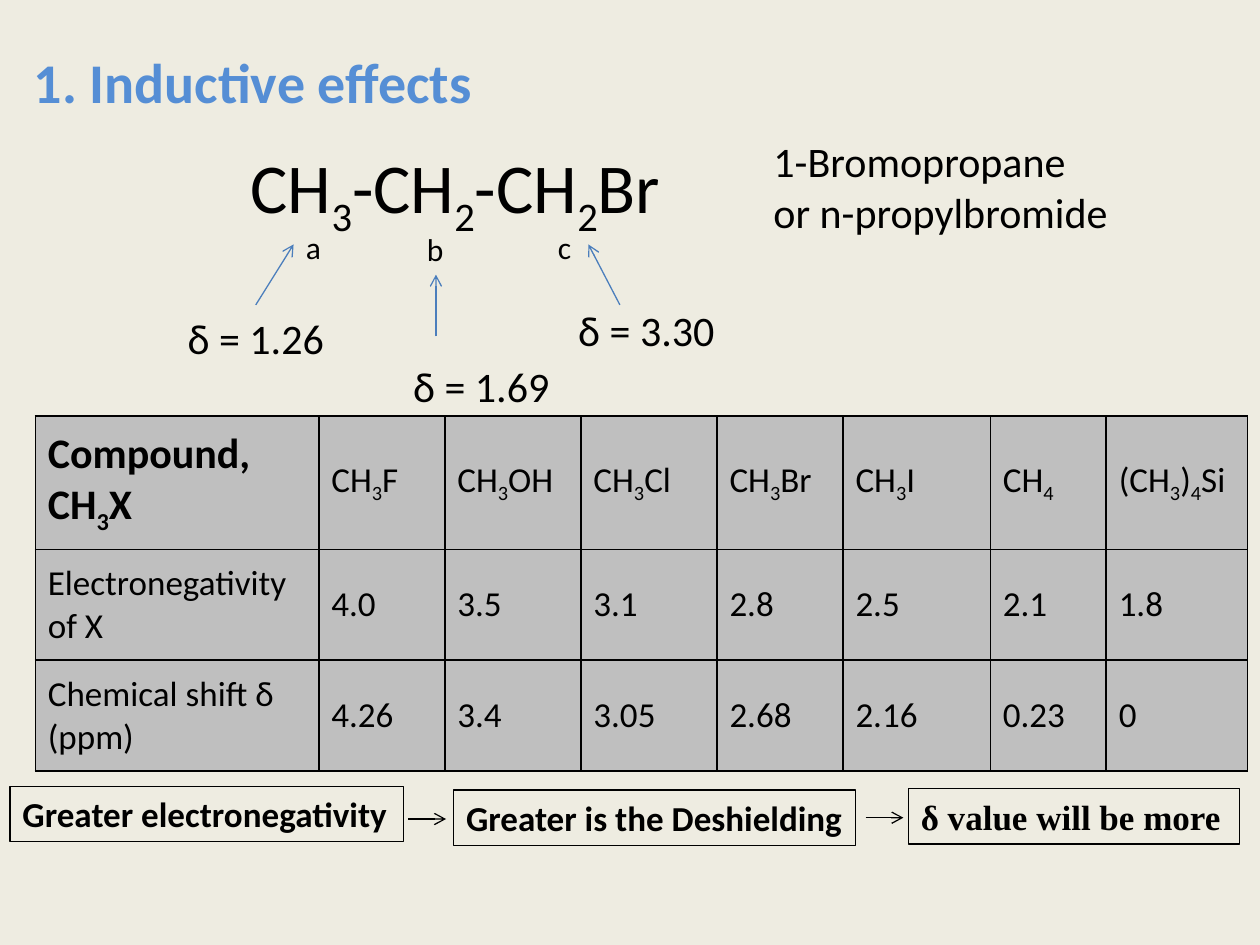
from itertools import groupby
from lxml import etree
from pptx import Presentation
from pptx.dml.color import RGBColor
from pptx.enum import shapes, text
from pptx.oxml import ns
from pptx.util import Inches, Pt

# Content
COLORS = {"back": "EEECE1", "title": "558ED5", "ink": "000000",
          "cell": "BFBFBF", "arrow": "4B7EBC"}
FONT, SERIF = "Calibri", "Times New Roman"

TITLE = ("1. Inductive effects", (0.17, 0.33, 3.73, 0.64))
FORMULA = ("CH3-CH2-CH2Br", (1.64, 1.09, 4.85, 0.77))
# text, box, size
LABELS = [
    ("a", (2.33, 1.76, 0.32, 0.4), 18),
    ("b", (3.29, 1.78, 0.34, 0.4), 18),
    ("c", (4.33, 1.76, 0.31, 0.4), 18),
    ("δ = 1.26", (1.39, 2.43, 1.29, 0.5), 24),
    ("δ = 3.30", (4.49, 2.37, 1.29, 0.5), 24),
    ("δ = 1.69", (3.18, 2.81, 1.29, 0.5), 24),
    ("1-Bromopropane\nor n-propylbromide", (6.04, 1.03, 2.88, 0.91), 24),
]
# start, end, color
ARROWS = [
    ((2.03, 2.42), (2.33, 1.94), "arrow"),
    ((3.46, 2.67), (3.46, 2.18), "arrow"),
    ((4.92, 2.42), (4.67, 1.94), "arrow"),
    ((3.24, 6.5), (3.54, 6.5), "ink"),
    ((6.87, 6.49), (7.17, 6.49), "ink"),
]
ROWS = [
    ["Compound, CH3X", "CH3F", "CH3OH", "CH3Cl", "CH3Br", "CH3I", "CH4", "(CH3)4Si"],
    ["Electronegativity of X", "4.0", "3.5", "3.1", "2.8", "2.5", "2.1", "1.8"],
    ["Chemical shift δ (ppm)", "4.26", "3.4", "3.05", "2.68", "2.16", "0.23", "0"],
]
WIDTHS = [2.25, 1, 1.08, 1.08, 1, 1.17, 0.92, 1.12]
HEIGHTS = [1.06, 0.88, 0.88]
STEPS = [
    ("Greater electronegativity", (0.08, 6.24, 3.12, 0.44), FONT),
    ("Greater is the Deshielding", (3.6, 6.27, 3.19, 0.44), FONT),
    ("δ value will be more", (7.21, 6.26, 2.63, 0.44), SERIF),
]


def rgb(name):
    return RGBColor.from_string(COLORS[name])


def style(par, size, bold=False, color="ink", face=FONT):
    font = par.font
    font.size, font.bold, font.name = Pt(size), bold, face
    font.color.rgb = rgb(color)


def write(frame, words, size, **look):
    frame.text = words
    for par in frame.paragraphs:
        style(par, size, **look)


def write_formula(frame, words, size, **look):
    """Lower every digit of a chemical formula."""
    par = frame.paragraphs[0]
    for low, part in groupby(words, str.isdigit):
        run = par.add_run()
        run.text = "".join(part)
        if low:
            run._r.get_or_add_rPr().set("baseline", "-25000")
    style(par, size, **look)


def add_box(slide, box):
    return slide.shapes.add_textbox(*map(Inches, box)).text_frame


def add_arrow(slide, start, end, color):
    line = slide.shapes.add_connector(
        shapes.MSO_CONNECTOR.STRAIGHT, *map(Inches, start + end))
    line.line.color.rgb = rgb(color)
    line.line.width = Pt(0.75)
    etree.SubElement(line.line._get_or_add_ln(), ns.qn("a:tailEnd"), type="arrow")
    etree.SubElement(line._element.spPr, ns.qn("a:effectLst"))


def add_borders(cell):
    props = cell._tc.get_or_add_tcPr()
    for spot, side in enumerate(("lnL", "lnR", "lnT", "lnB")):
        edge = etree.Element(ns.qn("a:" + side), w=str(Pt(1)))
        fill = etree.SubElement(edge, ns.qn("a:solidFill"))
        etree.SubElement(fill, ns.qn("a:srgbClr"), val=COLORS["ink"])
        props.insert(spot, edge)


def add_grid(slide):
    grid = slide.shapes.add_table(
        len(ROWS), len(WIDTHS), Inches(0.28), Inches(3.3),
        Inches(sum(WIDTHS)), Inches(sum(HEIGHTS))).table
    for col, width in zip(grid.columns, WIDTHS):
        col.width = Inches(width)
    for r, row in enumerate(ROWS):
        grid.rows[r].height = Inches(HEIGHTS[r])
        for c, words in enumerate(row):
            cell = grid.cell(r, c)
            cell.fill.solid()
            cell.fill.fore_color.rgb = rgb("cell")
            cell.vertical_anchor = text.MSO_ANCHOR.MIDDLE
            cell.margin_left = cell.margin_right = Inches(0.1)
            cell.margin_top = cell.margin_bottom = Inches(0.1)
            add_borders(cell)
            head = r == c == 0
            put = write_formula if r == 0 else write
            put(cell.text_frame, words, 24 if head else 20, bold=head)


def main():
    deck = Presentation()
    deck.slide_width, deck.slide_height = Inches(10), Inches(7.5)
    slide = deck.slides.add_slide(deck.slide_layouts[6])
    slide.background.fill.solid()
    slide.background.fill.fore_color.rgb = rgb("back")

    # Title and table
    words, box = TITLE
    write(add_box(slide, box), words, 32, bold=True, color="title")
    add_grid(slide)

    # Molecule with its labels
    words, box = FORMULA
    frame = add_box(slide, box)
    frame.word_wrap = True
    frame.margin_left = Inches(0.35)
    write_formula(frame, words, 40)
    for words, box, size in LABELS:
        write(add_box(slide, box), words, size)

    # Chain of reasoning
    for words, box, face in STEPS:
        step = slide.shapes.add_shape(
            shapes.MSO_SHAPE.RECTANGLE, *map(Inches, box))
        step.shadow.inherit = False
        step.fill.background()
        step.line.color.rgb = rgb("ink")
        step.line.width = Pt(0.75)
        write(step.text_frame, words, 20, bold=True, face=face)
        step.text_frame.word_wrap = True
        step.text_frame.paragraphs[0].alignment = text.PP_ALIGN.LEFT

    for start, end, color in ARROWS:
        add_arrow(slide, start, end, color)

    deck.save("out.pptx")


if __name__ == "__main__":
    main()
